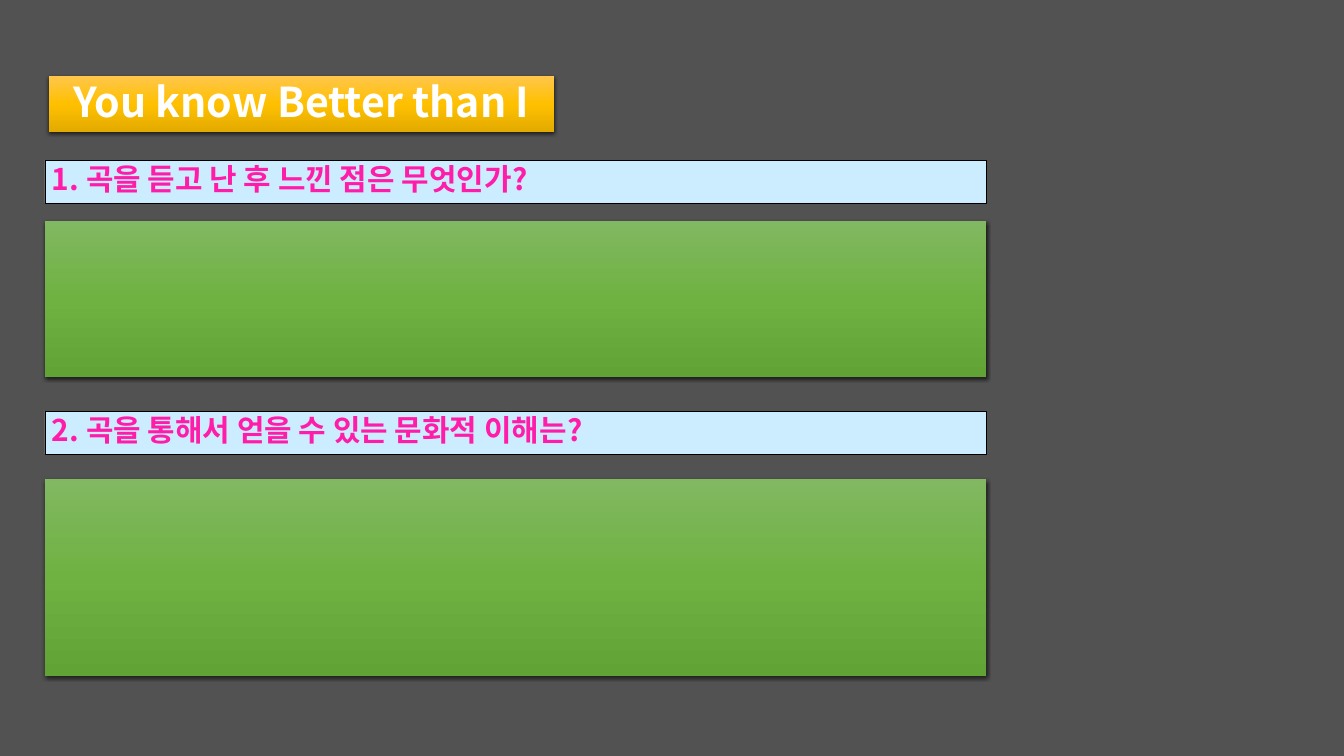
from copy import deepcopy

from lxml import etree
from pptx import Presentation
from pptx.dml.color import RGBColor
from pptx.enum.shapes import MSO_SHAPE
from pptx.enum.text import MSO_ANCHOR, MSO_AUTO_SIZE, PP_ALIGN
from pptx.oxml.ns import qn
from pptx.util import Emu, Pt

RECTANGLE = MSO_SHAPE.RECTANGLE
MIDDLE = MSO_ANCHOR.MIDDLE
LEFT, CENTER = PP_ALIGN.LEFT, PP_ALIGN.CENTER
TITLE_ONLY_LAYOUT = 5

TITLE = "You know Better than I"
TITLE_BOX = (49, 76, 505, 56)
COLUMN_LEFT, COLUMN_WIDTH, QUESTION_HEIGHT = 45, 941, 43
# question, its top, top of the answer panel, height of the answer panel
SECTIONS = [
    ("1. 곡을 듣고 난 후 느낀 점은 무엇인가?", 160, 221, 156),
    ("2. 곡을 통해서 얻을 수 있는 문화적 이해는?", 411, 479, 197),
]

THEME = {
    "font": "Noto Sans CJK KR",
    "background": "525252",
    "question_fill": "CCECFF",
    "question_line": "000000",
    "shadow": "000000",
    "gold": ("FFC64B", "FFC000", "E3AB00"),
    "green": ("81B861", "6FB242", "62A336"),
    "title_text": {"size": 44, "color": "FFFFFF"},
    "question_text": {"size": 32, "color": "FF1CA8"},
}


def px(length):
    return Emu(round(length * 914400 / 67.2))


def rgb(color):
    return RGBColor.from_string(color)


def place(shape, box):
    for name, length in zip(("left", "top", "width", "height"), box):
        setattr(shape, name, px(length))


def add_rectangle(slide, box):
    shape = slide.shapes.add_shape(RECTANGLE, *map(px, box))
    shape.shadow.inherit = False
    return shape


def make_glossy(shape, colors):
    """Give a shape a vertical three-colour gradient, no line and a soft shadow."""
    shape.fill.gradient()
    shape.fill.gradient_angle = 270
    properties = shape._element.spPr
    stop_list = properties.find(".//" + qn("a:gsLst"))
    stop_list.insert(1, deepcopy(stop_list[0]))
    for index, (stop, color) in enumerate(zip(shape.fill.gradient_stops, colors)):
        stop.position = index / 2
        stop.color.rgb = rgb(color)
    shape.line.fill.background()

    shape.shadow.inherit = False
    shadow = etree.SubElement(
        properties.find(qn("a:effectLst")), qn("a:outerShdw"),
        blurRad=str(Pt(4.5)), dist=str(Pt(1.5)), dir="5400000",
        algn="ctr", rotWithShape="0")
    color = etree.SubElement(shadow, qn("a:srgbClr"), val=THEME["shadow"])
    etree.SubElement(color, qn("a:alpha"), val="63000")


def write(shape, text, style, alignment):
    frame = shape.text_frame
    frame_format = {
        "word_wrap": True, "auto_size": MSO_AUTO_SIZE.NONE,
        "vertical_anchor": MIDDLE, "margin_left": px(7), "margin_right": px(7),
        "margin_top": px(0), "margin_bottom": px(6),
    }
    for name, value in frame_format.items():
        setattr(frame, name, value)
    paragraph = frame.paragraphs[0]
    paragraph.alignment = alignment
    run = paragraph.add_run()
    run.text = text
    font_format = {"name": THEME["font"], "size": Pt(style["size"]), "bold": True}
    for name, value in font_format.items():
        setattr(run.font, name, value)
    run.font.color.rgb = rgb(style["color"])
    latin = run._r.rPr.find(qn("a:latin"))
    latin.addnext(latin.makeelement(qn("a:ea"), {"typeface": THEME["font"]}))


def add_section(slide, question, question_top, answer_top, answer_height):
    bar = add_rectangle(
        slide, (COLUMN_LEFT, question_top, COLUMN_WIDTH, QUESTION_HEIGHT))
    bar.fill.solid()
    bar.fill.fore_color.rgb = rgb(THEME["question_fill"])
    bar.line.color.rgb = rgb(THEME["question_line"])
    bar.line.width = Pt(0.75)
    write(bar, question, THEME["question_text"], LEFT)

    answer = add_rectangle(
        slide, (COLUMN_LEFT, answer_top, COLUMN_WIDTH, answer_height))
    make_glossy(answer, THEME["green"])


def main():
    presentation = Presentation()
    presentation.slide_width, presentation.slide_height = px(1344), px(756)
    slide = presentation.slides.add_slide(
        presentation.slide_layouts[TITLE_ONLY_LAYOUT])
    slide.background.fill.solid()
    slide.background.fill.fore_color.rgb = rgb(THEME["background"])

    title = slide.shapes.title
    place(title, TITLE_BOX)
    make_glossy(title, THEME["gold"])
    write(title, TITLE, THEME["title_text"], CENTER)

    for section in SECTIONS:
        add_section(slide, *section)
    presentation.save("out.pptx")


if __name__ == "__main__":
    main()
